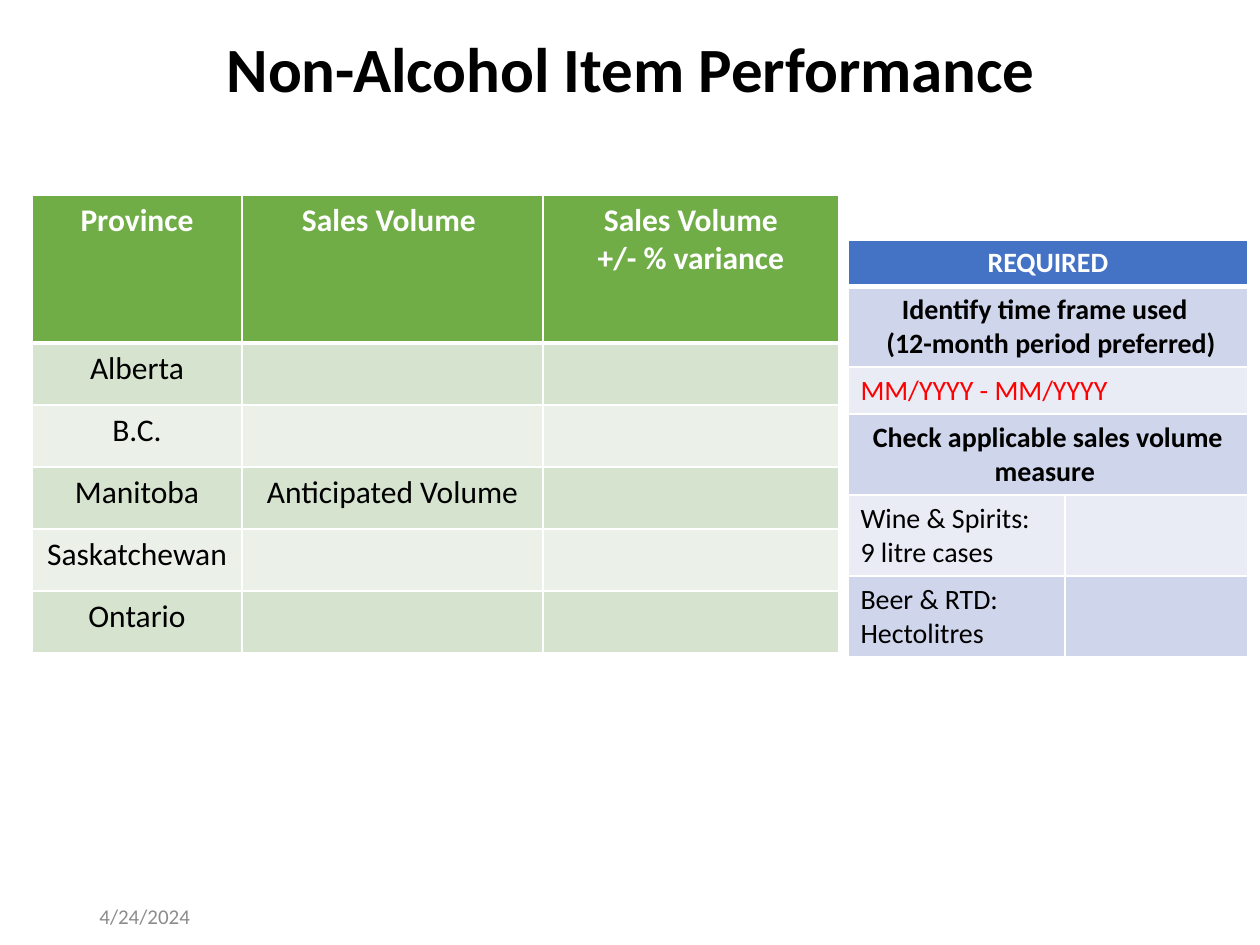
import pptx
import pptx.dml.color
import pptx.enum.text
import pptx.oxml.ns
import pptx.util
from lxml import etree

PX = 914400 // 126
FONT = "Calibri"
COLORS = {
    "white": "FFFFFF", "black": "000000", "red": "FF0000", "date": "8C8C8C",
    "green": "70AD47", "green_dark": "D5E3CF", "green_light": "EBF1E9",
    "blue": "4472C4", "blue_dark": "CFD5EA", "blue_light": "E9EBF5",
}
LEFT = pptx.enum.text.PP_ALIGN.LEFT
CENTER = pptx.enum.text.PP_ALIGN.CENTER


def rgb(name):
    return pptx.dml.color.RGBColor.from_string(COLORS[name])


def scale(*lengths):
    return [length * PX for length in lengths]


def write(text_frame, text, size, color, bold=False, align=LEFT):
    text_frame.text = text
    for paragraph in text_frame.paragraphs:
        paragraph.alignment = align
        for run in paragraph.runs:
            run.font.name = FONT
            run.font.size = pptx.util.Pt(size)
            run.font.bold = bold
            run.font.color.rgb = rgb(color)


def add_text(slide, box, text, size, color, bold=False, align=LEFT):
    text_frame = slide.shapes.add_textbox(*scale(*box)).text_frame
    text_frame.word_wrap = True
    text_frame.vertical_anchor = pptx.enum.text.MSO_ANCHOR.MIDDLE
    write(text_frame, text, size, color, bold, align)
    return text_frame


def set_borders(cell, **widths):
    """Draw white borders; widths are points by side L, R, T, B."""
    properties = cell._tc.get_or_add_tcPr()
    for side, width in widths.items():
        line = etree.SubElement(properties, pptx.oxml.ns.qn(f"a:ln{side}"),
                                w=str(pptx.util.Pt(width)))
        fill = etree.SubElement(line, pptx.oxml.ns.qn("a:solidFill"))
        etree.SubElement(fill, pptx.oxml.ns.qn("a:srgbClr"), val=COLORS["white"])


def add_table(slide, position, columns, rows, palette):
    """Add an empty banded table; palette names header, odd and even fills."""
    box = scale(*position, sum(columns), sum(rows))
    table = slide.shapes.add_table(len(rows), len(columns), *box).table
    for column, width in zip(table.columns, columns):
        column.width = width * PX
    for index, (row, height) in enumerate(zip(table.rows, rows)):
        row.height = height * PX
        fill = palette[0] if index == 0 else palette[2 - index % 2]
        for cell in row.cells:
            set_borders(cell, L=1, R=1, T=3 if index == 1 else 1,
                        B=3 if index == 0 else 1)
            cell.fill.solid()
            cell.fill.fore_color.rgb = rgb(fill)
    return table


def add_required_table(slide):
    table = add_table(slide, (848, 240), (217, 183), (46, 81, 47, 81, 81, 81),
                      ("blue", "blue_dark", "blue_light"))
    entries = [
        ("REQUIRED", "white", True, CENTER),
        ("Identify time frame used \n (12-month period preferred)", "black", True, CENTER),
        ("MM/YYYY - MM/YYYY", "red", False, LEFT),
        ("Check applicable sales volume measure ", "black", True, CENTER),
        ("Wine & Spirits: \n9 litre cases", "black", False, LEFT),
        ("Beer & RTD: Hectolitres", "black", False, LEFT),
    ]
    for index, (text, color, bold, align) in enumerate(entries):
        cell = table.cell(index, 0)
        if index < 4:
            cell.merge(table.cell(index, 1))
        write(cell.text_frame, text, 16, color, bold, align)


def add_sales_table(slide):
    table = add_table(slide, (32, 195), (210, 301, 296), [148] + [62] * 5,
                      ("green", "green_dark", "green_light"))
    headings = ["Province", "Sales Volume ", "Sales Volume\n+/- % variance"]
    for column, heading in enumerate(headings):
        write(table.cell(0, column).text_frame, heading, 18, "white", True, CENTER)
    provinces = ["Alberta", "B.C.", "Manitoba", "Saskatchewan", "Ontario"]
    for row, province in enumerate(provinces, start=1):
        write(table.cell(row, 0).text_frame, province, 18, "black", align=CENTER)
    manitoba = provinces.index("Manitoba") + 1
    write(table.cell(manitoba, 1).text_frame, "Anticipated Volume", 18, "black",
          align=CENTER)


def main():
    presentation = pptx.Presentation()
    presentation.slide_width, presentation.slide_height = scale(1260, 945)
    slide = presentation.slides.add_slide(presentation.slide_layouts[6])

    # Title and date
    title = add_text(slide, (64, 16, 1134, 112), "Non-Alcohol Item Performance",
                     36, "black", True, CENTER)
    title.paragraphs[0].line_spacing = 0.9
    add_text(slide, (87, 907, 284, 19), "4/24/2024", 12, "date")

    # Tables
    add_required_table(slide)
    add_sales_table(slide)

    presentation.save("out.pptx")


if __name__ == "__main__":
    main()
